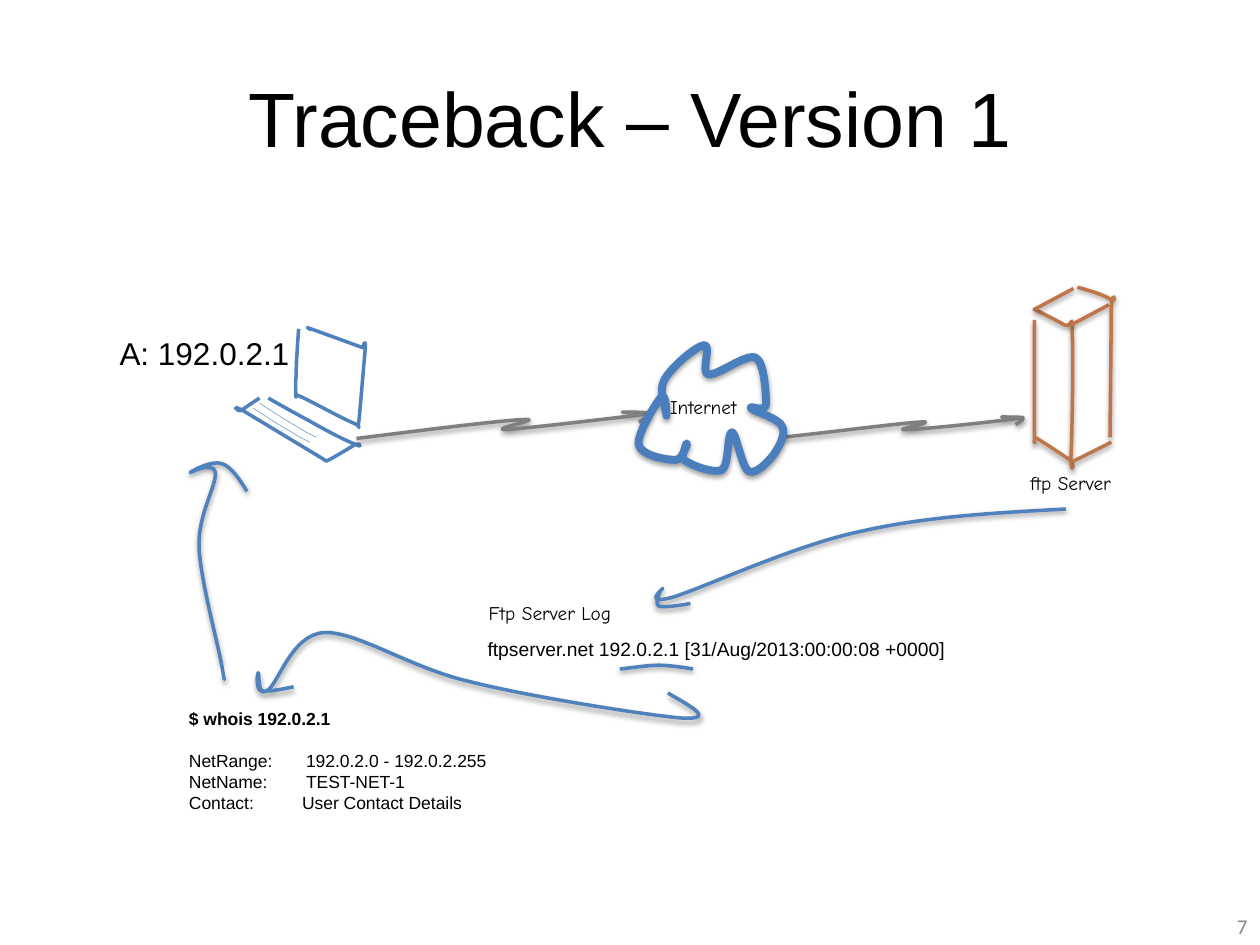
from lxml import etree
from pptx import Presentation
from pptx import util as u
from pptx.dml.color import RGBColor
from pptx.enum import text
from pptx.oxml import parse_xml
from pptx.oxml.ns import nsdecls, qn

BLACK = RGBColor(0x00, 0x00, 0x00)
PALE = RGBColor(0x89, 0x89, 0x89)
BLUE = RGBColor(0x4F, 0x81, 0xBD)
CLOUD = RGBColor(0x4B, 0x7E, 0xBC)
GRAY = RGBColor(0x7F, 0x7F, 0x7F)
RUST = RGBColor(0xC1, 0x76, 0x4A)
HAND = "Comic Neue"
INCH = 2.54
STEPS = 10

SCREEN = [(2.37, 2.61), (2.36, 2.76, 2.35, 2.9, 2.35, 2.99),
          (2.34, 3.08, 2.35, 3.12, 2.35, 3.15), (2.36, 3.17, 2.31, 3.11, 2.39, 3.15),
          (2.46, 3.18, 2.73, 3.33, 2.81, 3.36), (2.88, 3.39, 2.83, 3.43, 2.85, 3.33),
          (2.86, 3.23, 2.89, 2.86, 2.9, 2.76), (2.9, 2.67, 2.88, 2.76, 2.88, 2.76),
          (2.44, 2.6), (2.44, 2.6), (2.47, 2.62)]
BASE = [(2.13, 3.16), (2.25, 3.23, 2.38, 3.3, 2.49, 3.36),
        (2.61, 3.43, 2.77, 3.51, 2.83, 3.53), (2.88, 3.56, 2.86, 3.51, 2.82, 3.53),
        (2.78, 3.55, 2.64, 3.64, 2.59, 3.66), (2.56, 3.64), (1.93, 3.26),
        (1.82, 3.2, 1.89, 3.27, 1.91, 3.26), (1.94, 3.24, 2.06, 3.16, 2.06, 3.16)]
KEYS = [(2.01, 3.24), (2.12, 3.31, 2.22, 3.38, 2.3, 3.42),
        (2.37, 3.47, 2.46, 3.51, 2.46, 3.51)]
UPLINK = [(2.83, 3.48), (3.39, 3.41, 3.95, 3.34, 4.15, 3.33),
          (4.35, 3.32, 3.86, 3.41, 4.02, 3.41), (4.17, 3.4, 4.95, 3.31, 5.1, 3.29),
          (5.26, 3.27, 4.94, 3.27, 4.94, 3.27), (4.95, 3.27, 5.12, 3.28, 5.14, 3.29),
          (5.16, 3.3, 5.07, 3.35, 5.07, 3.35)]
DOWNLINK = [(6.22, 3.47), (6.68, 3.42, 7.14, 3.36, 7.31, 3.35),
            (7.47, 3.34, 7.06, 3.42, 7.19, 3.41), (7.32, 3.41, 7.96, 3.34, 8.09, 3.32),
            (8.21, 3.31, 7.95, 3.31, 7.95, 3.31), (7.96, 3.31, 8.1, 3.31, 8.12, 3.32),
            (8.13, 3.33, 8.06, 3.37, 8.06, 3.37)]
NET = [(6.08, 3.21), (6.08, 3.14, 6.07, 2.88, 6, 2.84),
       (5.92, 2.8, 5.69, 2.99, 5.62, 2.97), (5.56, 2.96, 5.65, 2.73, 5.59, 2.74),
       (5.53, 2.74, 5.32, 2.92, 5.27, 3.02), (5.22, 3.11, 5.3, 3.28, 5.29, 3.3),
       (5.29, 3.32, 5.29, 3.11, 5.25, 3.15), (5.21, 3.19, 5.05, 3.45, 5.07, 3.53),
       (5.09, 3.62, 5.3, 3.65, 5.36, 3.65), (5.43, 3.65, 5.44, 3.52, 5.45, 3.52),
       (5.47, 3.52, 5.39, 3.62, 5.43, 3.65), (5.48, 3.69, 5.66, 3.76, 5.73, 3.73),
       (5.79, 3.69, 5.77, 3.43, 5.81, 3.43), (5.84, 3.43, 5.89, 3.71, 5.94, 3.74),
       (6, 3.77, 6.09, 3.67, 6.14, 3.61), (6.18, 3.55, 6.24, 3.45, 6.21, 3.39),
       (6.19, 3.32, 5.99, 3.27, 5.96, 3.24), (5.94, 3.21, 6.07, 3.28, 6.08, 3.21)]
FRONT = [(8.21, 2.54), (8.21, 2.91, 8.21, 3.29, 8.21, 3.45),
         (8.22, 3.6, 8.19, 3.44, 8.23, 3.48), (8.28, 3.51, 8.45, 3.62, 8.49, 3.65),
         (8.54, 3.67, 8.5, 3.8, 8.5, 3.63), (8.51, 3.46, 8.52, 2.81, 8.51, 2.64),
         (8.51, 2.46, 8.51, 2.61, 8.45, 2.58), (8.4, 2.55, 8.2, 2.45, 8.2, 2.45)]
EDGES = [[(8.5, 2.58), (8.8, 2.42)], [(8.52, 3.66), (8.82, 3.51)],
         [(8.22, 2.45), (8.52, 2.29)]]
SIDE = [(8.55, 2.28), (8.67, 2.31, 8.78, 2.35, 8.82, 2.38),
        (8.87, 2.41, 8.83, 2.27, 8.82, 2.45), (8.82, 2.63, 8.81, 3.47, 8.81, 3.47)]
TO_LOG = [(8.46, 4.04), (7.9, 4.07, 7.34, 4.1, 6.82, 4.22),
          (6.3, 4.33, 5.6, 4.66, 5.34, 4.74), (5.08, 4.81, 5.28, 4.66, 5.26, 4.67),
          (5.24, 4.68, 5.19, 4.79, 5.23, 4.81), (5.27, 4.83, 5.48, 4.79, 5.48, 4.79)]
MARK = [(4.92, 5.31), (5.03, 5.3, 5.13, 5.28, 5.23, 5.28),
        (5.33, 5.28, 5.5, 5.31, 5.5, 5.31)]
TO_WHOIS = [(5.3, 5.5), (5.49, 5.61, 5.68, 5.71, 5.42, 5.7),
            (5.16, 5.68, 4.2, 5.53, 3.73, 5.41), (3.25, 5.3, 2.84, 5.01, 2.57, 5.02),
            (2.31, 5.04, 2.21, 5.43, 2.12, 5.48), (2.04, 5.54, 2.06, 5.34, 2.05, 5.34),
            (2.04, 5.34, 2.03, 5.47, 2.07, 5.48), (2.12, 5.5, 2.33, 5.45, 2.33, 5.45)]
TO_HOST = [(1.77, 5.34), (1.78, 5.39, 1.79, 5.45, 1.76, 5.28),
           (1.73, 5.11, 1.59, 4.6, 1.58, 4.34), (1.57, 4.09, 1.72, 3.85, 1.71, 3.75),
           (1.69, 3.65, 1.5, 3.76, 1.51, 3.75), (1.52, 3.74, 1.68, 3.65, 1.76, 3.68),
           (1.83, 3.7, 1.9, 3.8, 1.96, 3.9)]


def trace(path):
    spots = [path[0]]
    for seg in path[1:]:
        if len(seg) == 2:
            spots.append(seg)
            continue
        ends = [spots[-1], seg[:2], seg[2:4], seg[4:]]
        for step in range(1, STEPS + 1):
            t = step / STEPS
            mix = ((1 - t) ** 3, 3 * t * (1 - t) ** 2, 3 * t * t * (1 - t), t ** 3)
            spots.append(tuple(sum(m * e[i] for m, e in zip(mix, ends)) for i in (0, 1)))
    return [(u.Cm(x * INCH), u.Cm(y * INCH)) for x, y in spots]


def curve(shape, path, closed):
    route = next(shape._element.iter(qn("a:path")))
    for node in list(route):
        route.remove(node)
    for i, seg in enumerate(path):
        kind = "cubicBezTo" if len(seg) == 6 else "lnTo" if i else "moveTo"
        node = etree.SubElement(route, qn(f"a:{kind}"))
        for x, y in zip(seg[::2], seg[1::2]):
            etree.SubElement(node, qn("a:pt"), x=str(u.Cm(x * INCH) - shape.left),
                             y=str(u.Cm(y * INCH) - shape.top))
    if closed:
        etree.SubElement(route, qn("a:close"))


def shade(shape):
    fx = shape._element.spPr.find(qn("a:effectLst"))
    fx.append(parse_xml(
        f'<a:outerShdw {nsdecls("a")} blurRad="{u.Pt(3.1)}" dist="{u.Pt(1.6)}" '
        'dir="5400000" rotWithShape="0"><a:srgbClr val="000000">'
        '<a:alpha val="38000"/></a:srgbClr></a:outerShdw>'))


def sketch(slide, path, color, width=2, shadow=True, closed=False):
    spots = trace(path)
    pen = slide.shapes.build_freeform(*spots[0])
    pen.add_line_segments(spots[1:], close=closed)
    shape = pen.convert_to_shape()
    curve(shape, path, closed)
    shape.fill.background()
    shape.line.color.rgb = color
    shape.line.width = u.Pt(width)
    shape.shadow.inherit = False
    if shadow:
        shade(shape)


def write(slide, box, lines, size, face="Arial", color=BLACK, align=text.PP_ALIGN.LEFT,
          anchor=text.MSO_ANCHOR.TOP, wrap=False):
    frame = slide.shapes.add_textbox(*map(u.Cm, box)).text_frame
    frame.word_wrap = wrap
    frame.vertical_anchor = anchor
    if not wrap:
        frame.auto_size = text.MSO_AUTO_SIZE.SHAPE_TO_FIT_TEXT
    for i, line in enumerate(lines):
        para = frame.add_paragraph() if i else frame.paragraphs[0]
        para.text = line
        para.alignment = align
        para.font.size = u.Pt(size)
        para.font.name = face
        para.font.color.rgb = color
    return frame.paragraphs


def set_tab(para, place):
    tabs = etree.Element(qn("a:tabLst"))
    etree.SubElement(tabs, qn("a:tab"), pos=str(u.Cm(place)), algn="l")
    para._p.pPr.find(qn("a:defRPr")).addprevious(tabs)


def add_whois(slide):
    paras = write(slide, (3.56, 14.15, 6.6, 2.82),
                  ["$ whois 192.0.2.1", "NetRange:\t192.0.2.0 - 192.0.2.255",
                   "NetName:\tTEST-NET-1", "Contact:\tUser Contact Details"], 10)
    paras[0].font.bold = True
    paras[0].space_after = u.Pt(12)
    for para, place in zip(paras[1:], (2.36, 2.36, 2.28)):
        set_tab(para, place)


def main():
    deck = Presentation()
    deck.slide_width, deck.slide_height = u.Cm(25.4), u.Cm(19.05)
    slide = deck.slides.add_slide(deck.slide_layouts[6])
    mid = text.MSO_ANCHOR.MIDDLE
    write(slide, (0.74, 0.76, 23.93, 3.18), ["Traceback – Version 1"], 44,
          align=text.PP_ALIGN.CENTER, anchor=mid, wrap=True)
    write(slide, (19.48, 18.16, 5.92, 1.02), ["7"], 12, "Calibri", PALE,
          text.PP_ALIGN.RIGHT, mid, True)
    for path in (SCREEN, BASE):
        sketch(slide, path, BLUE, shadow=False)
    for dx, dy in ((0, 0), (0.05, -0.04)):
        row = [tuple(v + (dy if i % 2 else dx) for i, v in enumerate(seg)) for seg in KEYS]
        sketch(slide, row, BLUE, 0.25, False)
    write(slide, (2.16, 6.6, 4.01, 1.02), ["A: 192.0.2.1"], 18)
    for path in (UPLINK, DOWNLINK):
        sketch(slide, path, GRAY)
    sketch(slide, NET, CLOUD, 4.5, closed=True)
    for path in (FRONT, *EDGES, SIDE):
        sketch(slide, path, RUST)
    write(slide, (20.52, 9.37, 2.69, 0.74), ["ftp Server"], 11, HAND)
    write(slide, (13.26, 7.85, 2.16, 0.74), ["Internet"], 11, HAND)
    write(slide, (9.58, 12.73, 9.8, 0.74),
          ["ftpserver.net 192.0.2.1 [31/Aug/2013:00:00:08 +0000]"], 11)
    write(slide, (9.6, 11.99, 3.71, 0.74), ["Ftp Server Log"], 11, HAND)
    for path in (TO_LOG, MARK, TO_WHOIS, TO_HOST):
        sketch(slide, path, BLUE)
    add_whois(slide)
    deck.save("out.pptx")


if __name__ == "__main__":
    main()
